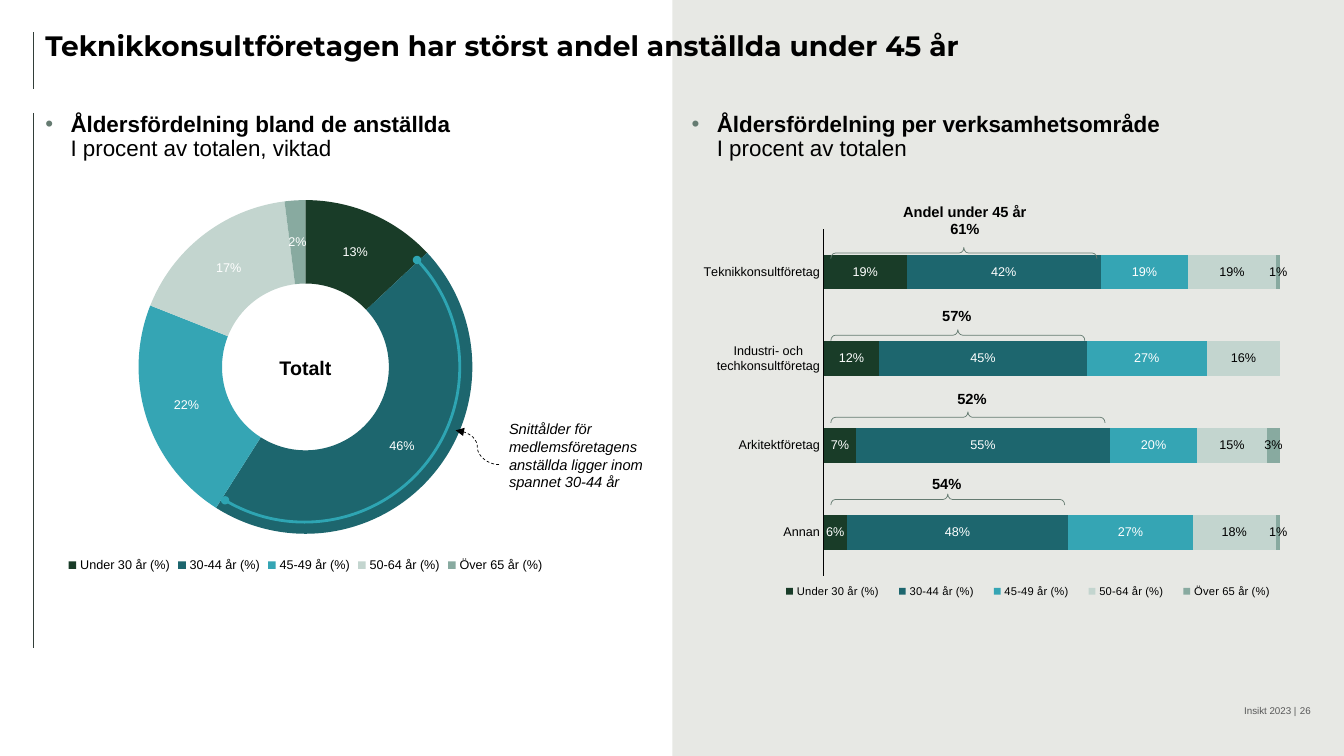
from dataclasses import dataclass

from lxml import etree
from pptx import Presentation
from pptx.chart.data import CategoryChartData
from pptx.dml.color import RGBColor
from pptx.enum.chart import XL_CHART_TYPE as ChartType, XL_LABEL_POSITION as LabelPosition
from pptx.enum.chart import XL_LEGEND_POSITION as LegendPosition, XL_TICK_MARK as TickMark
from pptx.enum.dml import MSO_LINE_DASH_STYLE as Dash
from pptx.enum.shapes import MSO_CONNECTOR as Connector, MSO_SHAPE as Preset
from pptx.enum.text import MSO_ANCHOR as Anchor, MSO_AUTO_SIZE as AutoSize, PP_ALIGN as Align
from pptx.oxml import parse_xml
from pptx.oxml.ns import nsdecls, qn
from pptx.util import Inches, Pt

BLACK, WHITE, PANEL, SAGE = "000000", "FFFFFF", "E7E8E4", "657B71"
AGES = ["Under 30 år (%)", "30-44 år (%)", "45-49 år (%)", "50-64 år (%)", "Över 65 år (%)"]
SECTORS = ["Teknikkonsultföretag", "Industri- och\ntechkonsultföretag", "Arkitektföretag", "Annan"]


@dataclass
class AgeGroup:
    name: str
    total: float
    by_sector: list[float]
    color: str
    label_color: str
    own_labels: dict[int, str]


@dataclass
class YoungShare:
    text: str
    left: float
    top: float
    width: float
    height: float
    span: float


GROUPS = [
    AgeGroup(AGES[0], 0.13, [0.18, 0.12, 0.07, 0.05], "193C28", WHITE, {0: "19%", 3: "6%"}),
    AgeGroup(AGES[1], 0.46, [0.42, 0.45, 0.55, 0.48], "1D666E", WHITE, {}),
    AgeGroup(AGES[2], 0.22, [0.19, 0.26, 0.19, 0.27], "35A5B4", WHITE, {1: "27%", 2: "20%"}),
    AgeGroup(AGES[3], 0.17, [0.19, 0.16, 0.15, 0.18], "C3D5CF", BLACK, {}),
    AgeGroup(AGES[4], 0.02, [0.01, 0, 0.03, 0.01], "88AAA0", BLACK, {}),
]
SHARES = [
    YoungShare("Andel under 45 år\n61%", 8.85, 1.96, 1.44, 0.45, 2.64),
    YoungShare("57%", 9.24, 2.99, 0.5, 0.28, 2.52),
    YoungShare("52%", 9.39, 3.82, 0.5, 0.28, 2.72),
    YoungShare("54%", 9.14, 4.66, 0.5, 0.28, 2.32),
]


def color(code: str) -> RGBColor:
    return RGBColor.from_string(code)


def style(font, size: float, code: str = BLACK, name: str = "Arial", bold=False, italic=False) -> None:
    font.name, font.size, font.bold, font.italic = name, Pt(size), bold, italic
    font.color.rgb = color(code)


def place(shape, left: float, top: float, width: float, height: float):
    shape.left, shape.top = Inches(left), Inches(top)
    shape.width, shape.height = Inches(width), Inches(height)
    return shape


def write(box, text: str, *, size: float, code: str = BLACK, name: str = "Arial", bold=False,
          italic=False, plain: str = "", align=Align.LEFT, anchor=Anchor.TOP, wrap=True,
          inset=True, spacing: float = 1, bullet=False) -> None:
    """Fill a box with one paragraph; plain is a last line without bold."""
    frame = box.text_frame
    frame.auto_size, frame.word_wrap, frame.vertical_anchor = AutoSize.NONE, wrap, anchor
    frame.margin_left = frame.margin_right = Inches(0.1 if inset else 0)
    frame.margin_top = frame.margin_bottom = Inches(0.05 if inset else 0)
    para = frame.paragraphs[0]
    if bullet:
        props = para._p.get_or_add_pPr()
        props.set("marL", str(Inches(0.25)))
        props.set("indent", str(Inches(-0.25)))
        props.append(parse_xml(f'<a:buClr {nsdecls("a")}><a:srgbClr val="{SAGE}"/></a:buClr>'))
        props.append(parse_xml(f'<a:buChar {nsdecls("a")} char="•"/>'))
    para.alignment, para.line_spacing, para.space_before = align, spacing, Pt(0)
    lines = [(line, bold) for line in text.split("\n")] + ([(plain, False)] if plain else [])
    for index, (line, heavy) in enumerate(lines):
        if index:
            para.add_line_break()
        span = para.add_run()
        span.text = line
        style(span.font, size, code, name, heavy, italic)


def add_text(page, bounds: tuple, text: str, **form) -> None:
    write(page.shapes.add_textbox(*map(Inches, bounds)), text, **form)


def add_outline(page, preset, bounds: tuple, code: str, width: float, adjust: tuple):
    shape = page.shapes.add_shape(preset, *map(Inches, bounds))
    shape.shadow.inherit = False
    shape.fill.background()
    shape.line.color.rgb, shape.line.width = color(code), Pt(width)
    for index, value in enumerate(adjust):
        shape.adjustments[index] = value
    return shape


def add_line(page, kind, ends: tuple, code: str):
    line = page.shapes.add_connector(kind, *map(Inches, ends))
    line.line.color.rgb, line.line.width = color(code), Pt(0.5)
    etree.SubElement(line._element.spPr, qn("a:effectLst"))
    return line


def add_ends(shape, **ends: str) -> None:
    for tag, kind in ends.items():
        etree.SubElement(shape.line._get_or_add_ln(), qn(f"a:{tag}"), type=kind)


def set_layout(parent, index: int, inner: bool, **shares: float) -> None:
    """Fix the place of a plot area or legend as shares of its chart."""
    for old in parent.findall(qn("c:layout")):
        parent.remove(old)
    target = '<c:layoutTarget val="inner"/>' if inner else ""
    modes = '<c:xMode val="edge"/><c:yMode val="edge"/>'
    sizes = "".join(f'<c:{key} val="{value}"/>' for key, value in shares.items())
    parent.insert(index, parse_xml(f'<c:layout {nsdecls("c")}><c:manualLayout>{target}{modes}{sizes}'
                                   "</c:manualLayout></c:layout>"))


def add_chart(page, kind, bounds: tuple, categories: list[str], series: dict, legend_size: float):
    data = CategoryChartData(number_format="0%")
    data.categories = categories
    for name, values in series.items():
        data.add_series(name, values)
    chart = page.shapes.add_chart(kind, *map(Inches, bounds), data).chart
    chart.has_title, chart.has_legend = False, True
    style(chart.font, 10)
    chart.legend.position, chart.legend.include_in_layout = LegendPosition.BOTTOM, False
    style(chart.legend.font, legend_size)
    return chart


def show_values(series, code: str):
    labels = series.data_labels
    labels.show_value, labels.number_format_is_linked = True, False
    labels.number_format = "0%;;"
    style(labels.font, 9, code)
    return labels


def paint(target, code: str) -> None:
    target.format.fill.solid()
    target.format.fill.fore_color.rgb = color(code)


def build_total(page) -> None:
    values = {"Series 1": [group.total for group in GROUPS]}
    chart = add_chart(page, ChartType.DOUGHNUT, (-0.18, 1.87, 6.42, 3.85), AGES, values, 9)
    set_layout(chart._chartSpace.chart.plotArea, 0, True, x=0.24, y=0.03, w=0.52, h=0.86)
    ring = chart.plots[0].series[0]
    show_values(ring, WHITE)
    for index, group in enumerate(GROUPS):
        paint(ring.points[index], group.color)
    add_text(page, (2.67, 3.48, 0.72, 0.34), "Totalt", size=14, bold=True, align=Align.CENTER, wrap=False)
    arc = add_outline(page, Preset.ARC, (1.48, 2.1, 3.08, 3.08), "2EA5B3", 2, (189.87, 72.45))
    add_ends(arc, headEnd="oval", tailEnd="oval")
    add_text(page, (4.95, 4.12, 1.78, 0.81), "Snittålder för medlemsföretagens anställda ligger inom "
             "spannet 30-44 år", size=10.5, italic=True)
    arrow = add_line(page, Connector.CURVE, (4.95, 4.61, 4.52, 4.27), BLACK)
    arrow.line.dash_style = Dash.DASH
    add_ends(arrow, tailEnd="triangle")


def build_sectors(page) -> None:
    values = {group.name: group.by_sector for group in GROUPS}
    chart = add_chart(page, ChartType.BAR_STACKED_100, (6.86, 2.19, 5.96, 3.87), SECTORS, values, 8)
    set_layout(chart._chartSpace.chart.plotArea, 0, True, x=0.22, y=0.02, w=0.76, h=0.89)
    set_layout(chart.legend._element, 1, False, x=0.13, y=0.92, w=0.86, h=0.06)
    plot = chart.plots[0]
    plot.gap_width, plot.overlap, plot.vary_by_categories = 150, 100, False
    for series, group in zip(plot.series, GROUPS):
        paint(series, group.color)
        show_values(series, group.label_color).position = LabelPosition.CENTER
        for index, text in group.own_labels.items():
            label = series.points[index].data_label
            label.text_frame.text = text
            style(label.text_frame.paragraphs[0].runs[0].font, 9, group.label_color)
            label.position = LabelPosition.CENTER
    axis = chart.category_axis
    axis.reverse_order, axis.major_tick_mark = True, TickMark.NONE
    axis.format.line.color.rgb, axis.format.line.width = color(BLACK), Pt(0.75)
    style(axis.tick_labels.font, 9)
    chart.value_axis.visible = chart.value_axis.has_major_gridlines = False
    # Braces start at one left edge and sit at equal steps
    for row, share in enumerate(SHARES):
        middle = 8.24 + share.span / 2
        top = 2.51 + 0.815 * row - share.span / 2
        brace = add_outline(page, Preset.RIGHT_BRACE, (middle - 0.055, top, 0.11, share.span), SAGE, 0.5,
                            (0.417, 0.5))
        brace.rotation = 270
        add_text(page, (share.left, share.top, share.width, share.height), share.text, size=10.5,
                 bold=True, wrap=False, align=Align.CENTER)


def main() -> None:
    deck = Presentation()
    deck.slide_width, deck.slide_height = Inches(13.33), Inches(7.5)
    page = deck.slides.add_slide(deck.slide_layouts[3])
    # Right panel behind everything, and the left rules
    panel = page.shapes.add_shape(Preset.RECTANGLE, *map(Inches, (6.67, 0, 6.66, 7.5)))
    panel.shadow.inherit = False
    panel.fill.solid()
    panel.fill.fore_color.rgb = color(PANEL)
    panel.line.fill.background()
    page.shapes._spTree.insert(2, panel._element)
    for top, bottom in ((0.32, 0.88), (1.12, 6.43)):
        add_line(page, Connector.STRAIGHT, (0.33, top, 0.33, bottom), "323E39")
    # Title and the two headings
    title, left, right = page.placeholders
    write(place(title, 0.45, 0.32, 12.55, 0.56), "Teknikkonsultföretagen har störst andel anställda under 45 år",
          size=20, name="Montserrat", bold=True, inset=False, spacing=0.9)
    heading = dict(size=16, bold=True, inset=False, spacing=0.9, bullet=True)
    write(place(left, 0.45, 1.12, 5.5, 0.56), "Åldersfördelning bland de anställda",
          plain="I procent av totalen, viktad", **heading)
    write(place(right, 6.86, 1.12, 5.41, 0.67), "Åldersfördelning per verksamhetsområde",
          plain="I procent av totalen", **heading)
    # Charts and footer
    build_total(page)
    build_sectors(page)
    for bounds, text in (((8.36, 6.93, 4.5, 0.18), "Insikt 2023 |"), ((10, 6.93, 3, 0.18), "26")):
        add_text(page, bounds, text, size=7, code="595959", align=Align.RIGHT, anchor=Anchor.BOTTOM, inset=False)
    deck.save("out.pptx")


if __name__ == "__main__":
    main()
